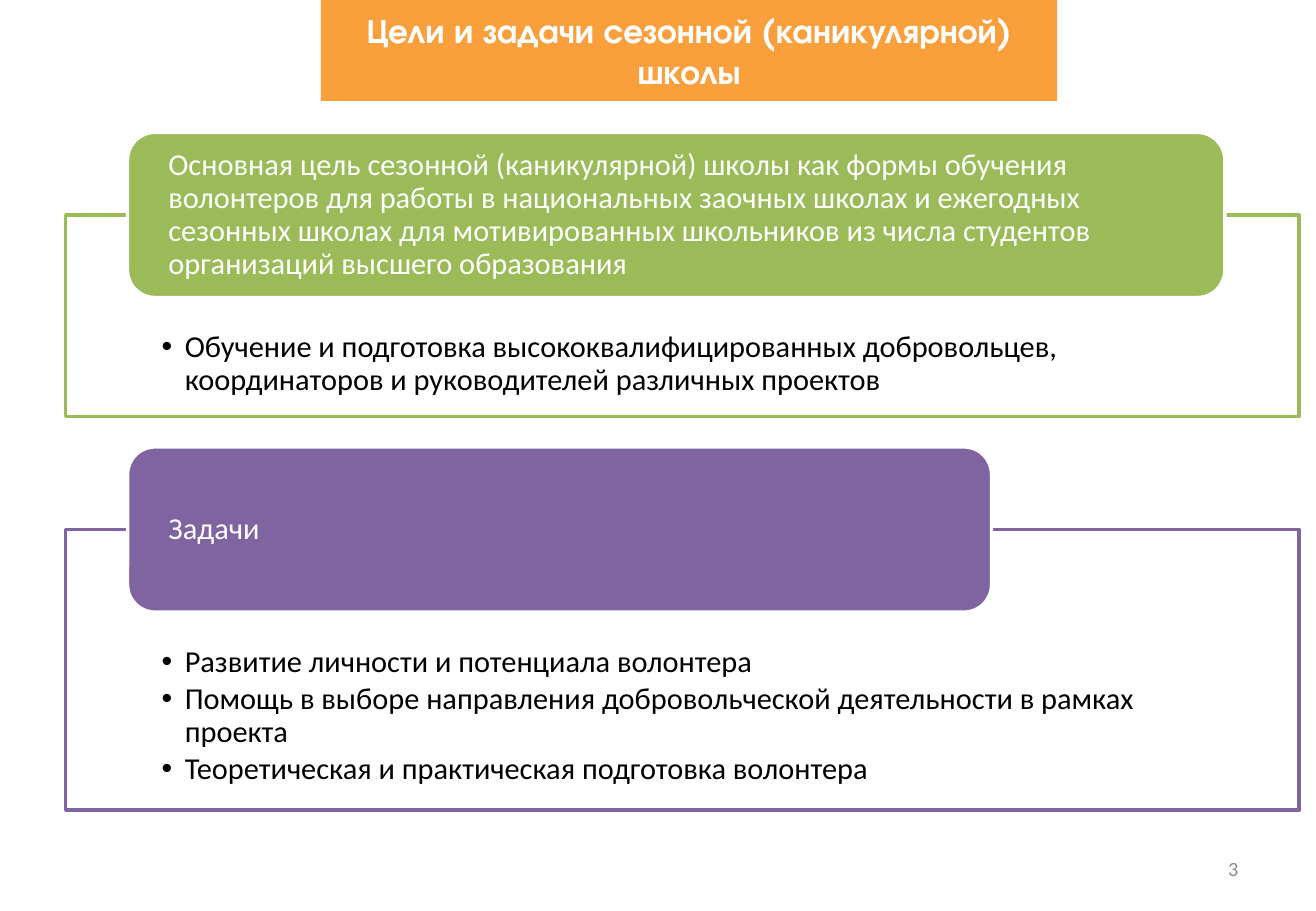
"""Build the slide on the goals and tasks of the seasonal school."""
import dataclasses
from typing import Any

import pptx
import pptx.dml.color
import pptx.enum.shapes
import pptx.enum.text
import pptx.oxml
import pptx.oxml.ns
import pptx.util
from lxml import etree

Inches = pptx.util.Inches
Pt = pptx.util.Pt
ALIGN = pptx.enum.text.PP_ALIGN
ANCHOR = pptx.enum.text.MSO_ANCHOR

COLORS = {
    "orange": "F99F3C",
    "green": "9BBB59",
    "purple": "8064A2",
    "white": "FFFFFF",
    "black": "000000",
    "gray": "8C8C8C",
}
FRAME_LEFT, FRAME_WIDTH = 0.54, 10.15
HEADING_LEFT, HEADING_HEIGHT = 1.05, 1.36
HEADING_RISE = HEADING_HEIGHT / 2

TITLE_FONT = {"name": "TeX Gyre Adventor", "size": Pt(20), "bold": True}
BODY_FONT = {"name": "Calibri", "size": Pt(18), "bold": False}
NUMBER_FONT = {"name": "Calibri", "size": Pt(12)}

TITLE_FRAME = {
    "word_wrap": True,
    "auto_size": pptx.enum.text.MSO_AUTO_SIZE.NONE,
    "vertical_anchor": ANCHOR.MIDDLE,
}
HEADING_FRAME = TITLE_FRAME | {
    "margin_left": Inches(0.27),
    "margin_right": Inches(0.27),
    "margin_top": 0,
    "margin_bottom": 0,
}
LIST_FRAME = TITLE_FRAME | {
    "vertical_anchor": ANCHOR.TOP,
    "margin_left": Inches(0.79),
    "margin_right": Inches(0.79),
    "margin_top": Inches(0.96),
    "margin_bottom": Inches(0.14),
}
CENTERED = {"alignment": ALIGN.CENTER}
HEADING_PARAGRAPH = {"alignment": ALIGN.LEFT, "line_spacing": 0.9}
LIST_PARAGRAPH = HEADING_PARAGRAPH | {
    "level": 1,
    "space_before": Pt(0),
    "space_after": Pt(2.7),
}


@dataclasses.dataclass(frozen=True)
class Section:
    """A heading over a framed list."""

    heading: str
    items: tuple[str, ...]
    color: str
    top: float
    height: float
    heading_width: float


SECTIONS = (
    Section(
        "Основная цель сезонной (каникулярной) школы как формы обучения волонтеров "
        "для работы в национальных заочных школах и ежегодных сезонных школах для "
        "мотивированных школьников из числа студентов организаций высшего образования",
        ("Обучение и подготовка высококвалифицированных добровольцев, "
         "координаторов и руководителей различных проектов",),
        "green", 1.77, 1.66, 9.03,
    ),
    Section(
        "Задачи",
        ("Развитие личности и потенциала волонтера",
         "Помощь в выборе направления добровольческой деятельности в рамках проекта",
         "Теоретическая и практическая подготовка волонтера"),
        "purple", 4.36, 2.31, 7.11,
    ),
)


def apply(target: Any, values: dict[str, Any]) -> None:
    """Set every attribute named in values."""
    for name, value in values.items():
        setattr(target, name, value)


def rgb(color: str) -> pptx.dml.color.RGBColor:
    """Return a named colour."""
    return pptx.dml.color.RGBColor.from_string(COLORS[color])


def place(block: Any, left: float, top: float, width: float, height: float) -> None:
    """Move and size a block in inches."""
    apply(block, {"left": Inches(left), "top": Inches(top),
                  "width": Inches(width), "height": Inches(height)})


def paint(block: Any, fill: str, line: str | None = None) -> None:
    """Fill a block and outline it when a line colour is given."""
    block.fill.solid()
    block.fill.fore_color.rgb = rgb(fill)
    if line:
        block.line.color.rgb = rgb(line)
        block.line.width = Pt(2)


def add_bullet(paragraph: Any) -> None:
    """Give a paragraph a hanging round bullet."""
    properties = paragraph._p.get_or_add_pPr()
    properties.set("marL", str(Inches(0.19)))
    properties.set("indent", str(-Inches(0.19)))
    bullet = etree.SubElement(properties, pptx.oxml.ns.qn("a:buChar"))
    bullet.set("char", "•")


def write(block: Any, texts: tuple[str, ...], frame: dict[str, Any],
          layout: dict[str, Any], font: dict[str, Any], color: str,
          bulleted: bool = False) -> None:
    """Write formatted paragraphs into a block."""
    words = block.text_frame
    apply(words, frame)
    for index, text in enumerate(texts):
        paragraph = words.add_paragraph() if index else words.paragraphs[0]
        if bulleted:
            add_bullet(paragraph)
        apply(paragraph, layout)
        run = paragraph.add_run()
        run.text = text
        apply(run.font, font)
        run.font.color.rgb = rgb(color)


def add_section(slide: Any, section: Section, items: Any) -> None:
    """Draw one section, its list held by a body placeholder."""
    place(items, FRAME_LEFT, section.top, FRAME_WIDTH, section.height)
    paint(items, "white", section.color)
    write(items, section.items, LIST_FRAME, LIST_PARAGRAPH, BODY_FONT, "black", True)

    heading = slide.shapes.add_shape(
        pptx.enum.shapes.MSO_SHAPE.ROUNDED_RECTANGLE, 0, 0, 0, 0)
    heading.shadow.inherit = False
    place(heading, HEADING_LEFT, section.top - HEADING_RISE,
          section.heading_width, HEADING_HEIGHT)
    paint(heading, section.color, "white")
    write(heading, (section.heading,), HEADING_FRAME, HEADING_PARAGRAPH, BODY_FONT, "white")


def add_slide_number(slide: Any) -> None:
    """Add the page number as a live field."""
    number = slide.shapes.add_textbox(0, 0, 0, 0)
    place(number, 7.76, 6.95, 2.53, 0.4)
    write(number, ("3",), TITLE_FRAME, {"alignment": ALIGN.RIGHT}, NUMBER_FONT, "gray")
    field = number.text_frame.paragraphs[0].runs[0]._r
    field.tag = pptx.oxml.ns.qn("a:fld")
    field.set("id", "{B6F15528-21DE-4FAA-801E-634DDDAF4B2B}")
    field.set("type", "slidenum")


def main() -> None:
    """Build and save the presentation."""
    deck = pptx.Presentation()
    apply(deck, {"slide_width": Inches(10.83), "slide_height": Inches(7.5)})
    deck.element.set("firstSlideNum", "3")
    slide = deck.slides.add_slide(deck.slide_layouts[3])
    title, *lists = slide.placeholders
    place(title, 2.64, 0, 6.06, 0.83)
    paint(title, "orange")
    write(title, ("Цели и задачи сезонной (каникулярной) школы",),
          TITLE_FRAME, CENTERED, TITLE_FONT, "white")
    for section, items in zip(SECTIONS, lists):
        add_section(slide, section, items)
    add_slide_number(slide)
    deck.save("out.pptx")


if __name__ == "__main__":
    main()
